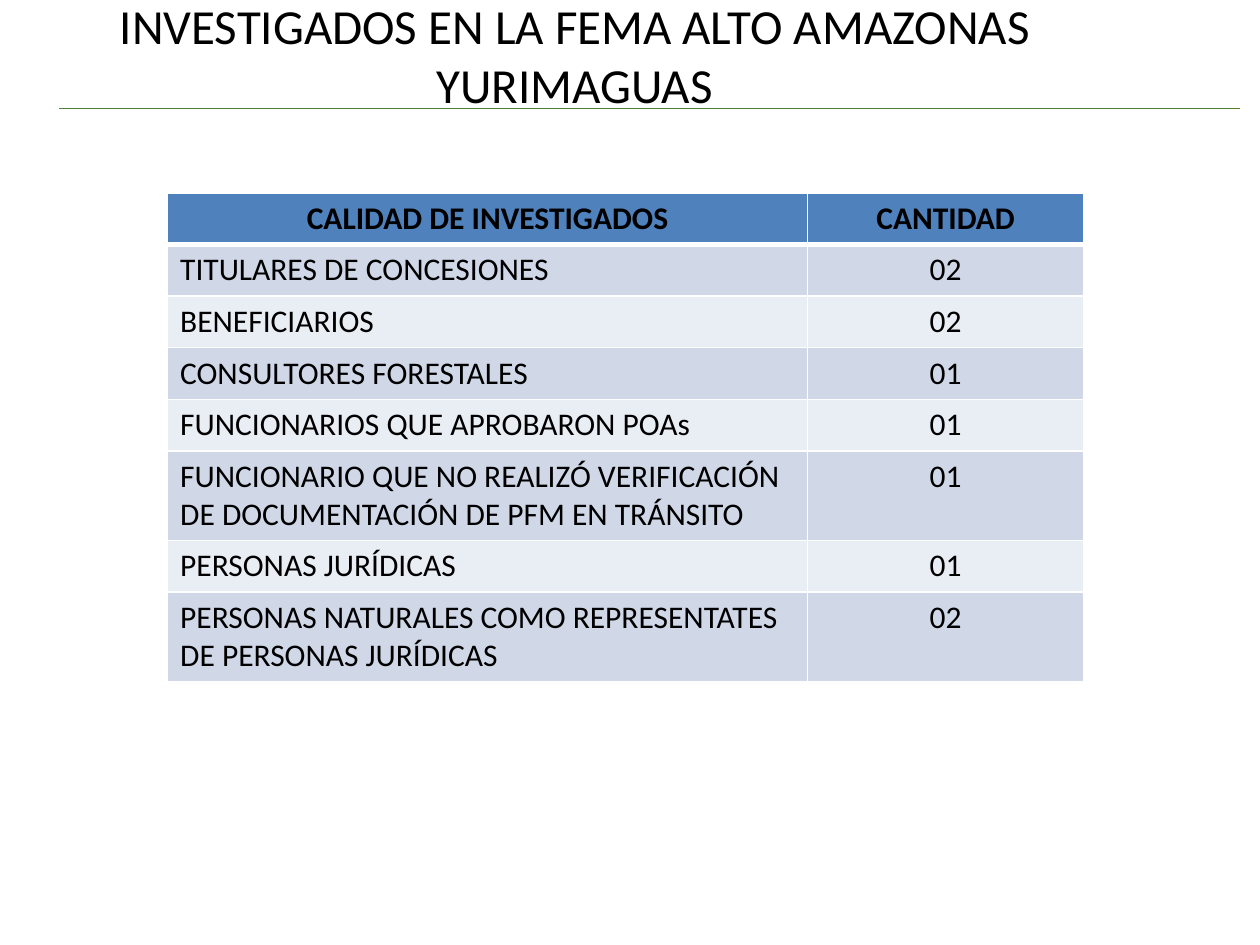
from dataclasses import dataclass

from lxml.etree import SubElement
from pptx import Presentation
from pptx.dml.color import RGBColor
from pptx.enum.shapes import MSO_CONNECTOR
from pptx.enum.text import MSO_ANCHOR, MSO_AUTO_SIZE, PP_ALIGN
from pptx.oxml.ns import qn
from pptx.util import Inches, Pt


@dataclass(frozen=True)
class Theme:
    font: str = "Calibri"
    text: str = "000000"
    rule: str = "548235"
    border: str = "FFFFFF"
    header: str = "4F81BD"
    bands: tuple = ("D0D8E8", "E9EDF4")
    title_size: int = 28
    table_size: int = 18


THEME = Theme()
TITLE = "INVESTIGADOS EN LA FEMA ALTO AMAZONAS YURIMAGUAS"
HEADER = ("CALIDAD DE INVESTIGADOS", "CANTIDAD")
ROWS = [
    ("TITULARES DE CONCESIONES", "02"),
    ("BENEFICIARIOS", "02"),
    ("CONSULTORES FORESTALES", "01"),
    ("FUNCIONARIOS QUE APROBARON POAs", "01"),
    ("FUNCIONARIO QUE NO REALIZÓ VERIFICACIÓN DE DOCUMENTACIÓN DE PFM EN TRÁNSITO", "01"),
    ("PERSONAS JURÍDICAS", "01"),
    ("PERSONAS NATURALES COMO REPRESENTATES DE PERSONAS JURÍDICAS", "02"),
]
COLUMN_WIDTHS = (5.08, 2.19)
ROW_HEIGHT = 0.41


def set_attributes(target, values):
    for name, value in values.items():
        setattr(target, name, value)


def write_text(text_frame, text, size, alignment, bold=False):
    text_frame.text = text
    paragraph = text_frame.paragraphs[0]
    paragraph.alignment = alignment
    font = paragraph.runs[0].font
    set_attributes(font, {"name": THEME.font, "size": Pt(size), "bold": bold})
    font.color.rgb = RGBColor.from_string(THEME.text)


def add_title(slide):
    title = slide.shapes.title
    set_attributes(title, {"left": Inches(0.31), "top": Inches(0),
                           "width": Inches(8.5), "height": Inches(0.86)})
    set_attributes(title.text_frame, {"word_wrap": True,
                                      "auto_size": MSO_AUTO_SIZE.NONE,
                                      "vertical_anchor": MSO_ANCHOR.MIDDLE})
    write_text(title.text_frame, TITLE, THEME.title_size, PP_ALIGN.CENTER)


def add_rule(slide):
    rule = slide.shapes.add_connector(
        MSO_CONNECTOR.STRAIGHT, Inches(0.47), Inches(0.86), Inches(9.84), Inches(0.86))
    rule.line.color.rgb = RGBColor.from_string(THEME.rule)
    rule.line.width = Pt(0.5)
    SubElement(rule._element.spPr, qn("a:effectLst"))


def set_borders(cell, widths):
    """Draw the cell's sides; widths maps L, R, T and B to points."""
    properties = cell._tc.get_or_add_tcPr()
    for side, width in widths.items():
        line = SubElement(properties, qn(f"a:ln{side}"), w=str(Pt(width)))
        fill = SubElement(line, qn("a:solidFill"))
        SubElement(fill, qn("a:srgbClr"), val=THEME.border)


def add_investigated_table(slide):
    rows = [HEADER, *ROWS]
    frame = slide.shapes.add_table(
        len(rows), len(HEADER), Inches(1.33), Inches(1.53),
        Inches(sum(COLUMN_WIDTHS)), Inches(ROW_HEIGHT * len(rows)))
    table = frame.table
    for column, width in zip(table.columns, COLUMN_WIDTHS):
        column.width = Inches(width)
    for row_index, values in enumerate(rows):
        is_header = row_index == 0
        table.rows[row_index].height = Inches(ROW_HEIGHT)
        color = THEME.header if is_header else THEME.bands[(row_index - 1) % 2]
        widths = {"L": 1, "R": 1, "T": 3 if row_index == 1 else 1,
                  "B": 3 if is_header else 1}
        for column_index, value in enumerate(values):
            cell = table.cell(row_index, column_index)
            centered = is_header or column_index == 1
            write_text(cell.text_frame, value, THEME.table_size,
                       PP_ALIGN.CENTER if centered else PP_ALIGN.LEFT, is_header)
            set_borders(cell, widths)
            cell.fill.solid()
            cell.fill.fore_color.rgb = RGBColor.from_string(color)


def main():
    presentation = Presentation()
    set_attributes(presentation, {"slide_width": Inches(10), "slide_height": Inches(7.5)})
    title_only = presentation.slide_layouts[5]
    slide = presentation.slides.add_slide(title_only)
    add_title(slide)
    add_rule(slide)
    add_investigated_table(slide)
    presentation.save("out.pptx")


if __name__ == "__main__":
    main()
